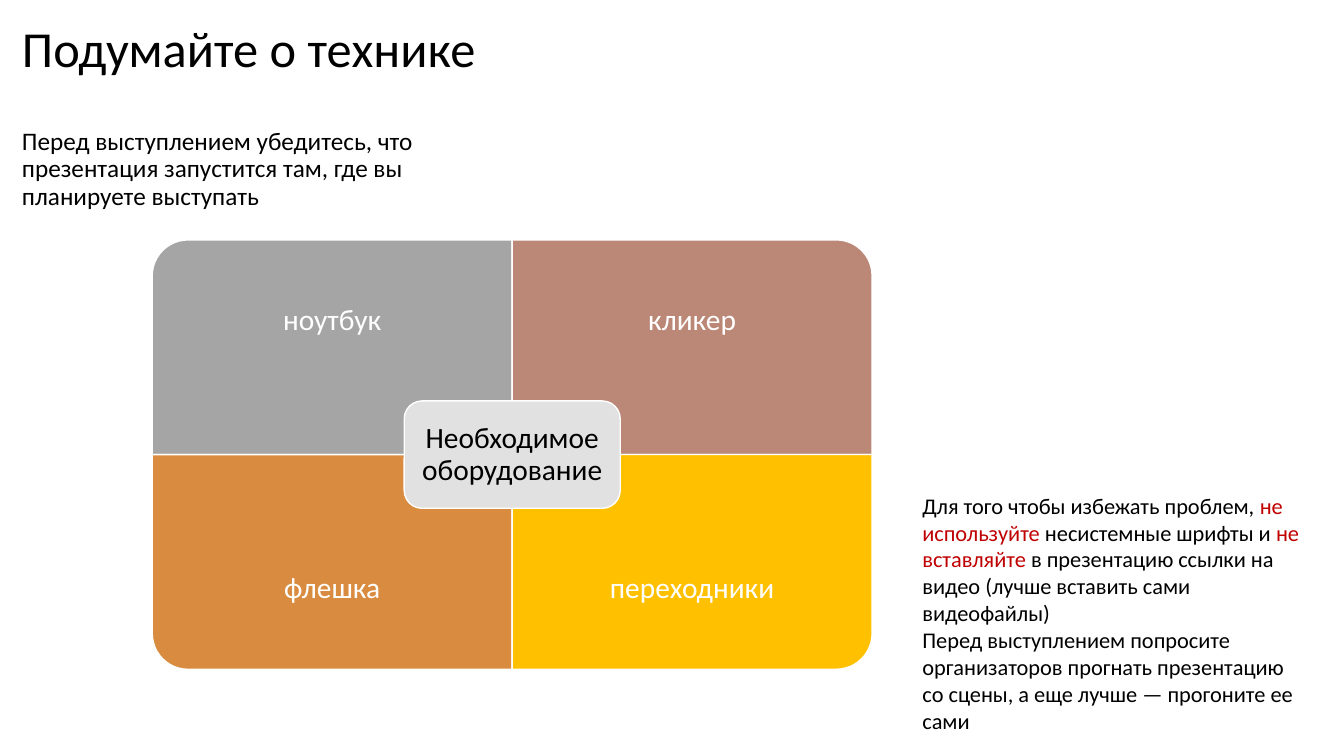
from pptx import Presentation
from pptx.dml.color import RGBColor
from pptx.enum import shapes, text
from pptx.util import Inches, Pt

HUES = {"black": "000000", "white": "FFFFFF", "red": "C00000", "gray": "A5A5A5",
        "rose": "BB8776", "orange": "D98C3F", "gold": "FFC000", "pale": "E1E1E1"}
TITLE = "Подумайте о технике"
INTRO = "Перед выступлением убедитесь, что презентация запустится там, где вы планируете выступать"
GEAR = [("ноутбук", "gray", 270), ("кликер", "rose", 0),
        ("флешка", "orange", 180), ("переходники", "gold", 90)]
HUB = "Необходимое оборудование"
ADVICE = [
    [("Для того чтобы избежать проблем, ", "black"), ("не используйте ", "red"),
     ("несистемные шрифты и ", "black"), ("не вставляйте", "red"),
     (" в презентацию ссылки на видео (лучше вставить сами видеофайлы)", "black")],
    [("Перед выступлением попросите организаторов прогнать презентацию со сцены, "
      "а еще лучше — прогоните ее сами", "black")],
]
LEFT, TOP, WIDE, HIGH = 1.51, 2.38, 3.57, 2.13
LABEL = 1.6

deck = Presentation()
deck.slide_width, deck.slide_height = Inches(13.33), Inches(7.5)
slide = deck.slides.add_slide(deck.slide_layouts[6])


def color(name):
    return RGBColor.from_string(HUES[name])


def write(words, box, size, hue="black", center=False, middle=False, inset=None, line=0.9):
    frame = slide.shapes.add_textbox(*map(Inches, box)).text_frame
    frame.word_wrap = True
    if middle:
        frame.vertical_anchor = text.MSO_ANCHOR.MIDDLE
    if inset is not None:
        frame.margin_left = frame.margin_right = Inches(inset)
        frame.margin_top = frame.margin_bottom = Inches(inset)
    paras = [[(words, hue)]] if isinstance(words, str) else words
    for i, runs in enumerate(paras):
        para = frame.add_paragraph() if i else frame.paragraphs[0]
        para.line_spacing = line
        para.alignment = text.PP_ALIGN.CENTER if center else text.PP_ALIGN.LEFT
        for part, tint in runs:
            run = para.add_run()
            run.text = part
            run.font.name, run.font.size = "Calibri", Pt(size)
            run.font.color.rgb = color(tint)


def block(kind, box, hue, turn=0):
    shape = slide.shapes.add_shape(kind, *map(Inches, box))
    shape.shadow.inherit = False
    shape.rotation = turn
    shape.fill.solid()
    shape.fill.fore_color.rgb = color(hue)
    shape.line.color.rgb = color("white")
    shape.line.width = Pt(1)


write(TITLE, (0.12, -0.22, 11.5, 1.45), 36, middle=True)
write(INTRO, (0.12, 1.23, 4.46, 1.07), 18)

for i, (name, hue, turn) in enumerate(GEAR):
    row, col = divmod(i, 2)
    x, y = LEFT + col * WIDE, TOP + row * HIGH
    w, h = (HIGH, WIDE) if turn % 180 else (WIDE, HIGH)
    block(shapes.MSO_SHAPE.ROUND_1_RECTANGLE,
          (x + (WIDE - w) / 2, y + (HIGH - h) / 2, w, h), hue, turn)
    write(name, (x, y + row * (HIGH - LABEL), WIDE, LABEL), 21, "white",
          center=True, middle=True, inset=0.16)

w, h = WIDE * 0.6, HIGH / 2
x, y = LEFT + WIDE - w / 2, TOP + HIGH - h / 2
block(shapes.MSO_SHAPE.ROUNDED_RECTANGLE, (x, y, w, h), "pale")
write(HUB, (x + 0.05, y + 0.05, w - 0.1, h - 0.1), 21,
      center=True, middle=True, inset=0.09)

write(ADVICE, (9.05, 4.83, 4, 2.52), 16, line=1.0)

deck.save("out.pptx")
